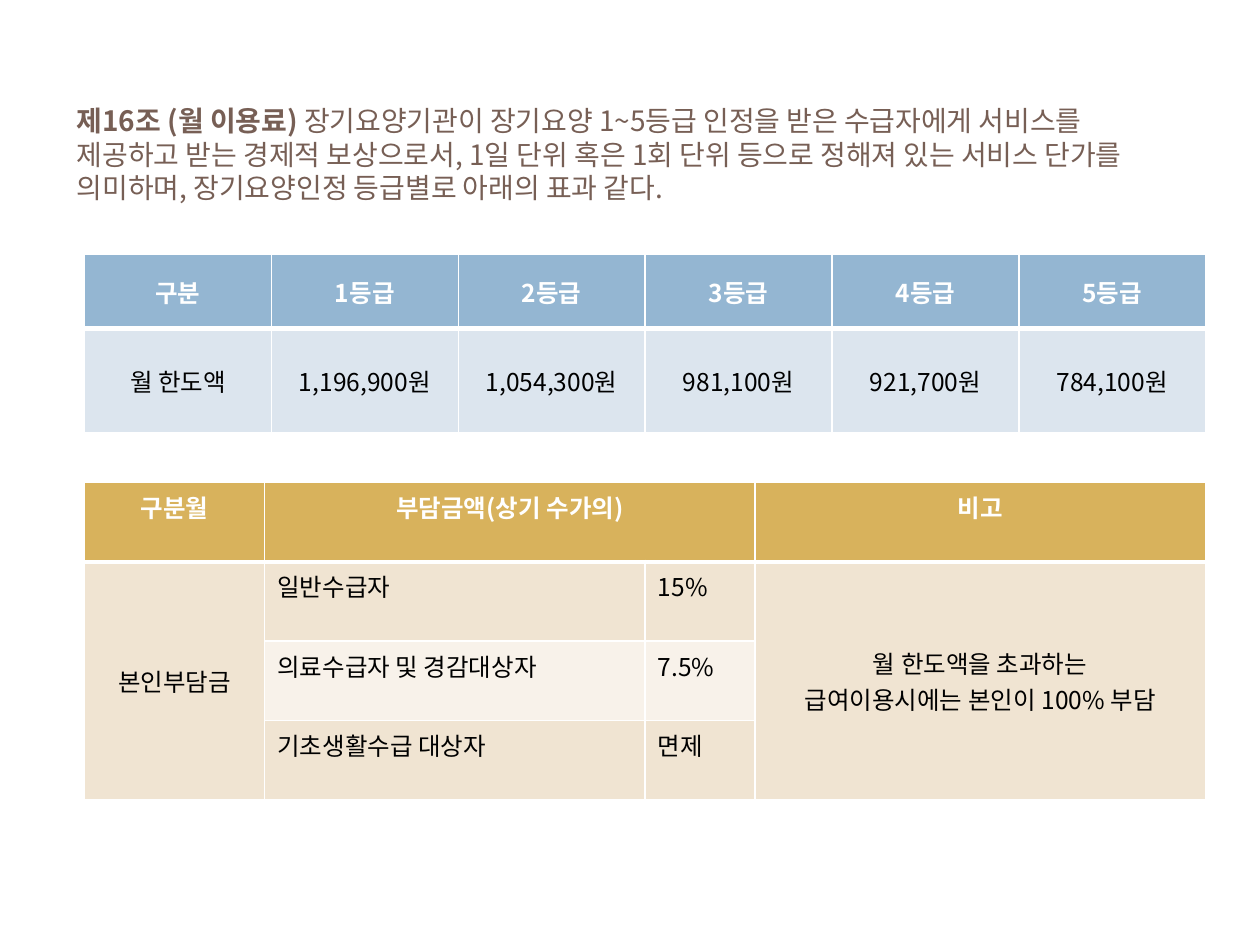
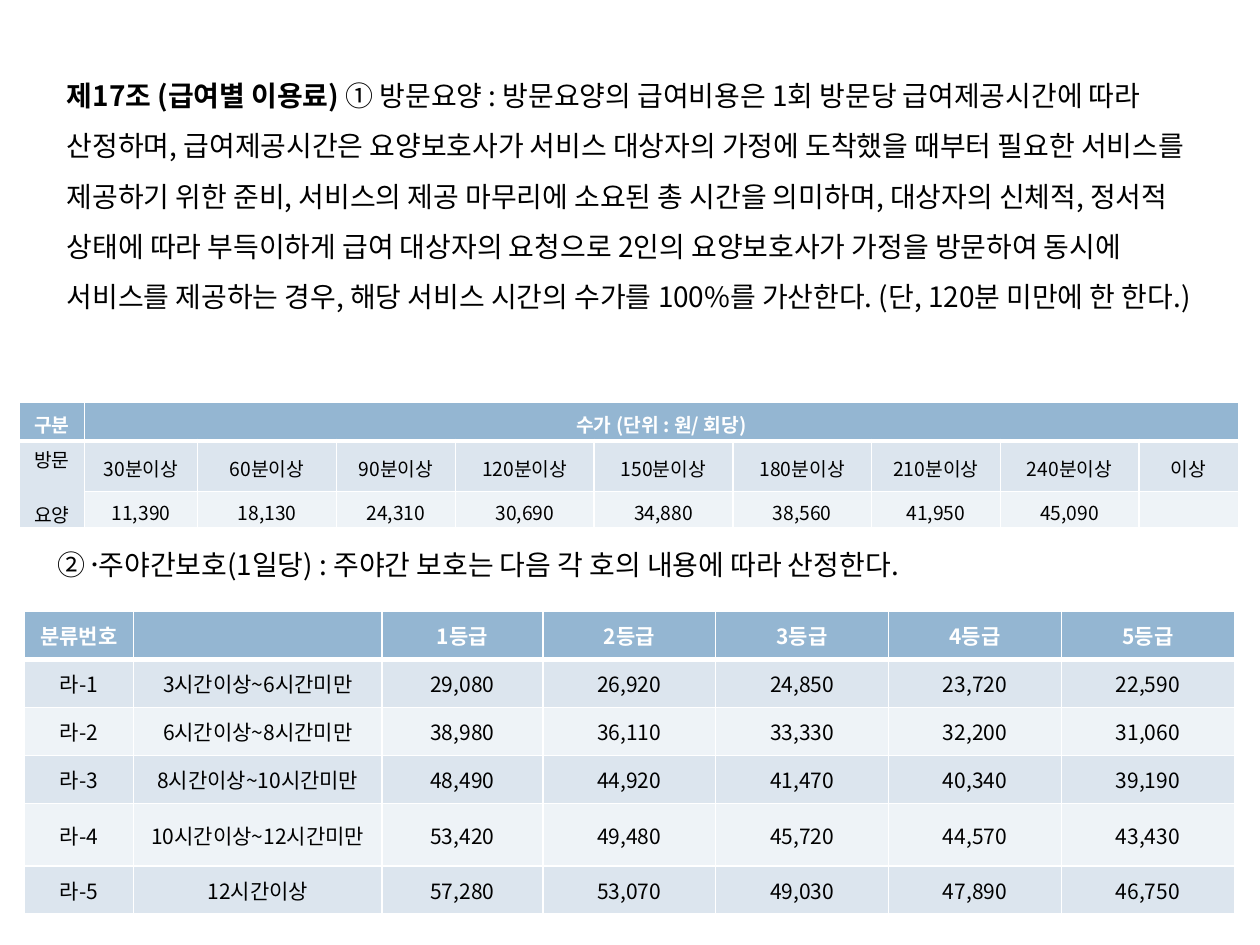
import pptx
import pptx.util
import pptx.dml.color
import pptx.enum.text
import pptx.oxml.ns
from dataclasses import dataclass
from lxml import etree

Pt = pptx.util.Pt
Align = pptx.enum.text.PP_ALIGN
Anchor = pptx.enum.text.MSO_ANCHOR
Fit = pptx.enum.text.MSO_AUTO_SIZE
qn = pptx.oxml.ns.qn

# Content
MONTH = ("제16조 (월 이용료) ",
         "장기요양기관이 장기요양 1~5등급 인정을 받은 수급자에게 서비스를 제공하고 받는 "
         "경제적 보상으로서, 1일 단위 혹은 1회 단위 등으로 정해져 있는 서비스 단가를 "
         "의미하며, 장기요양인정 등급별로 아래의 표과 같다.")
VISIT = ("제17조 (급여별 이용료) ",
         "① 방문요양 : 방문요양의 급여비용은 1회 방문당 급여제공시간에 따라 산정하며, "
         "급여제공시간은 요양보호사가 서비스 대상자의 가정에 도착했을 때부터 필요한 서비스를 "
         "제공하기 위한 준비, 서비스의 제공 마무리에 소요된 총 시간을 의미하며, 대상자의 "
         "신체적, 정서적 상태에 따라 부득이하게 급여 대상자의 요청으로 2인의 요양보호사가 "
         "가정을 방문하여 동시에 서비스를 제공하는 경우, 해당 서비스 시간의 수가를 100%를 "
         "가산한다. (단, 120분 미만에 한 한다.)")
DAY = "② 주〮야간보호(1일당) : 주야간 보호는 다음 각 호의 내용에 따라 산정한다."

GRADES = [f"{n}등급" for n in range(1, 6)]
LIMITS = [
    ["구분"] + GRADES,
    ["월 한도액", "1,196,900원", "1,054,300원", "981,100원", "921,700원", "784,100원"],
]
SHARES = [
    ["구분월", "부담금액(상기 수가의)", "", "비고"],
    ["본인부담금", "일반수급자", "15%",
     "월 한도액을 초과하는\n급여이용시에는 본인이 100% 부담"],
    ["", "의료수급자 및 경감대상자", "7.5%", ""],
    ["", "기초생활수급 대상자", "면제", ""],
]
VISITS = [
    ["구분", "수가 (단위 : 원/ 회당)"] + [""] * 8,
    ["방문\n요양"] + [f"{n}분이상" for n in range(30, 241, 30)] + ["이상"],
    ["", "11,390", "18,130", "24,310", "30,690", "34,880", "38,560", "41,950",
     "45,090", ""],
]
DAYS = [
    ["분류번호", ""] + GRADES,
    ["라-1", "3시간이상~6시간미만", "29,080", "26,920", "24,850", "23,720", "22,590"],
    ["라-2", "6시간이상~8시간미만", "38,980", "36,110", "33,330", "32,200", "31,060"],
    ["라-3", "8시간이상~10시간미만", "48,490", "44,920", "41,470", "40,340", "39,190"],
    ["라-4", "10시간이상~12시간미만", "53,420", "49,480", "45,720", "44,570", "43,430"],
    ["라-5", "12시간이상", "57,280", "53,070", "49,030", "47,890", "46,750"],
]


# Theme
@dataclass(frozen=True)
class Theme:
    font: str = "Noto Sans CJK KR"
    white: str = "FFFFFF"
    black: str = "000000"
    brown: str = "775F55"
    blue: tuple = ("94B6D2", "DCE5EE", "EEF3F7")  # head, odd row, even row
    gold: tuple = ("D8B25C", "F0E4D2", "F8F2EA")
    body: int = 16
    large: int = 14
    mid: int = 12
    small: int = 11
    thin: int = 1
    thick: int = 3


T = Theme()


def rgb(code):
    return pptx.dml.color.RGBColor.from_string(code)


# Text
def add_run(para, text, size, color, bold=False):
    run = para.add_run()
    run.text = text
    font = run.font
    font.size, font.bold = Pt(size), bold
    font.color.rgb = rgb(color)
    font.name = T.font
    props = run._r.get_or_add_rPr()
    props.set("kern", "0")
    etree.SubElement(props, qn("a:ea"), typeface=T.font)


def fill_frame(shape, box, runs, color, lead, anchor):
    shape.left, shape.top, shape.width, shape.height = map(Pt, box)
    frame = shape.text_frame
    frame.word_wrap = True
    frame.auto_size = Fit.NONE
    frame.vertical_anchor = anchor
    para = frame.paragraphs[0]
    para.alignment, para.line_spacing = Align.LEFT, lead
    para.space_before = Pt(0)
    for text, bold in runs:
        add_run(para, text, T.body, color, bold)


def add_title(slide, box, parts, color, lead, anchor):
    fill_frame(slide.shapes.title, box, zip(parts, (True, False)), color, lead, anchor)


# Tables
def set_edges(cell, row):
    props = cell._tc.get_or_add_tcPr()
    wide = {"T": row == 1, "B": row == 0}
    for spot, side in enumerate("LRTB"):
        width = T.thick if wide.get(side) else T.thin
        line = etree.Element(qn(f"a:ln{side}"), w=str(Pt(width)))
        paint = etree.SubElement(line, qn("a:solidFill"))
        etree.SubElement(paint, qn("a:srgbClr"), val=T.white)
        props.insert(spot, line)


def fill_cell(cell, text, row, size, hues, left, top, pad, gap):
    cell.fill.solid()
    cell.fill.fore_color.rgb = rgb(hues[0 if row == 0 else 2 - row % 2])
    set_edges(cell, row)
    cell.margin_top, cell.margin_bottom = map(Pt, pad)
    cell.vertical_anchor = Anchor.TOP if top else Anchor.MIDDLE
    frame = cell.text_frame
    for spot, line in enumerate(text.split("\n")):
        para = frame.add_paragraph() if spot else frame.paragraphs[0]
        para.alignment = Align.LEFT if left else Align.CENTER
        if spot:
            para.space_before = Pt(gap)
        if line:
            add_run(para, line, size, T.white if row == 0 else T.black, row == 0)
        else:
            etree.SubElement(para._p, qn("a:endParaRPr"), sz=str(size * 100))


def add_grid(slide, spot, cols, rows, data, size, hues=T.blue, spans=(),
             lefts=(), pad=(3.6, 3.6), gap=0):
    x, y = spot
    box = map(Pt, (x, y, sum(cols), sum(rows)))
    grid = slide.shapes.add_table(len(rows), len(cols), *box).table
    for col, width in zip(grid.columns, cols):
        col.width = Pt(width)
    for row, height in zip(grid.rows, rows):
        row.height = Pt(height)
    for r, line in enumerate(data):
        for c, text in enumerate(line):
            left = r > 0 and c in lefts
            top = left or (r == 0 and bool(lefts))
            fill_cell(grid.cell(r, c), text, r, size, hues, left, top, pad, gap)
    for first, last in spans:
        grid.cell(*first).merge(grid.cell(*last))


# Slides
def make_month(slide):
    add_title(slide, (36.7, 49, 642.2, 77.8), MONTH, T.brown, 1, Anchor.MIDDLE)
    add_grid(slide, (48.3, 145.5), [106.8] * 6, [42.4, 59.6], LIMITS, T.large)
    add_grid(slide, (48.3, 275.8), [103, 217.4, 62.8, 257.3], [45.3] * 4, SHARES,
             T.large, T.gold, lefts=(1, 2),
             spans=[((0, 1), (0, 2)), ((1, 0), (3, 0)), ((1, 3), (3, 3))])


def make_visit(slide):
    add_title(slide, (31, 31.7, 657.4, 181.4), VISIT, T.black, 1.5, Anchor.TOP)
    add_grid(slide, (11, 230), [37.2, 64.8, 79.3, 68, 79.3, 79.3, 79.3, 73.5, 79.3, 56.8],
             [22, 29, 20.2], VISITS, T.small, pad=(2.4, 0), gap=15.5,
             spans=[((0, 1), (0, 9)), ((1, 0), (2, 0))])
    note = slide.shapes.add_textbox(0, 0, 0, 0)
    fill_frame(note, (25.9, 309.6, 657.4, 26.6), [(DAY, False)], T.black, 1, Anchor.TOP)
    add_grid(slide, (13.8, 349.5), [62.6, 141.8, 92] + [98.8] * 4,
             [27.2, 27.6, 27.6, 27.4, 35.7, 27.5], DAYS, T.mid, pad=(0, 0))


def main():
    deck = pptx.Presentation()
    deck.slide_width, deck.slide_height = Pt(720), Pt(540)
    for make in (make_month, make_visit):
        make(deck.slides.add_slide(deck.slide_layouts[5]))
    deck.save("out.pptx")


if __name__ == "__main__":
    main()
